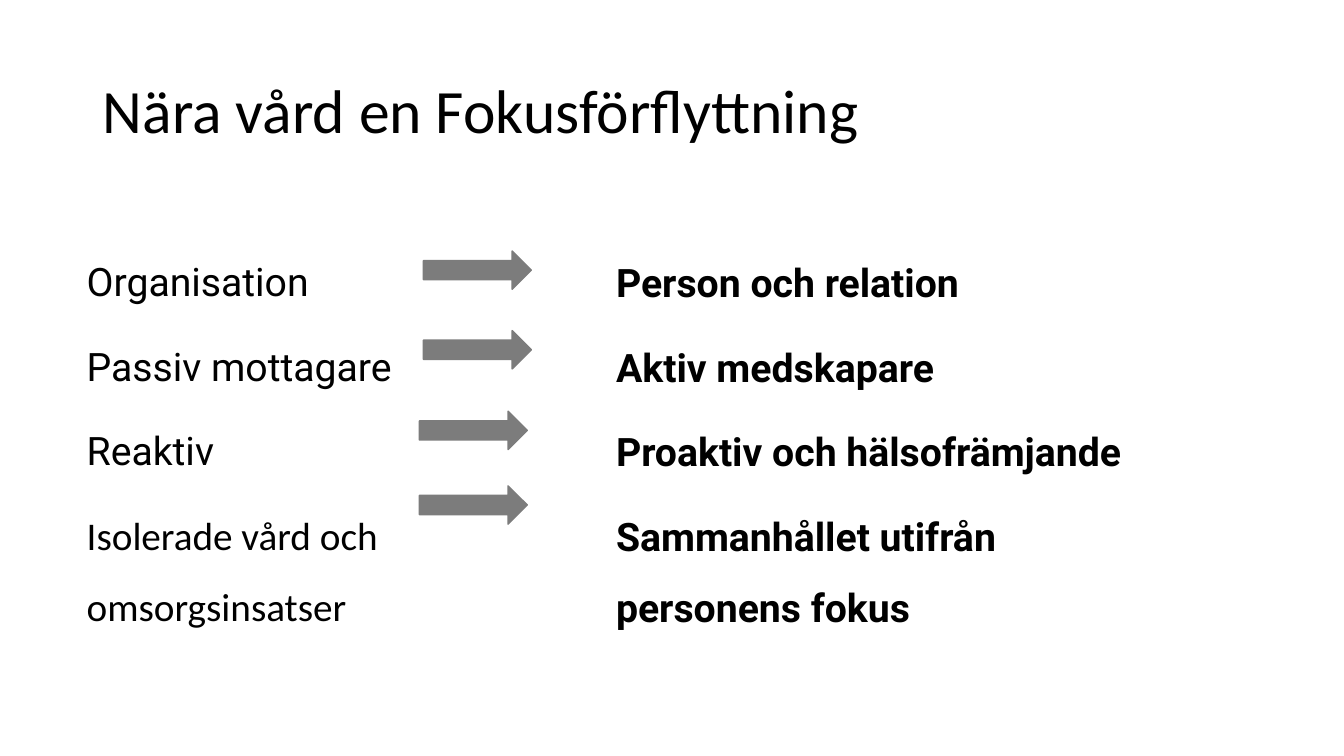
from pptx import Presentation
from pptx.dml.color import RGBColor
from pptx.enum.shapes import MSO_SHAPE as SHAPE
from pptx.enum.text import MSO_ANCHOR as ANCHOR, MSO_AUTO_SIZE as AUTO, PP_ALIGN as ALIGN
from pptx.oxml.ns import qn
from pptx.util import Inches, Pt

BLACK = RGBColor(0x00, 0x00, 0x00)
GREY = RGBColor(0x7C, 0x7C, 0x7C)

FROM_ITEMS = [
    ("Organisation", "Roboto"),
    ("Passiv mottagare", "Roboto"),
    ("Reaktiv", "Roboto"),
    ("Isolerade vård och omsorgsinsatser", "Calibri"),
]
TO_ITEMS = [
    ("Person och relation", "Roboto"),
    ("Aktiv medskapare", "Roboto"),
    ("Proaktiv och hälsofrämjande", "Roboto"),
    ("Sammanhållet utifrån personens fokus", "Roboto"),
]
ARROW_SPOTS = [(4.2, 2.49), (4.2, 3.28), (4.16, 4.08), (4.16, 4.82)]


def place(sp, left, top, width, height):
    sp.left, sp.top = Inches(left), Inches(top)
    sp.width, sp.height = Inches(width), Inches(height)


def format_paragraph(p, font, size, spacing, bold=False):
    p.alignment = ALIGN.LEFT
    p.line_spacing = spacing
    for r in p.runs:
        r.font.name = font
        r.font.size = Pt(size)
        r.font.bold = bold
        r.font.color.rgb = BLACK


def set_title(sp, text):
    place(sp, 0.92, 0.4, 11.5, 1.45)
    tf = sp.text_frame
    tf.text = text
    tf.auto_size = AUTO.NONE
    tf.vertical_anchor = ANCHOR.MIDDLE
    format_paragraph(tf.paragraphs[0], "Calibri", 44, 0.9)


def fill_column(sp, box, items, bold=False):
    place(sp, *box)
    tf = sp.text_frame
    tf.text = "\n".join(text for text, _ in items)
    tf.auto_size = AUTO.NONE
    tf.vertical_anchor = ANCHOR.TOP
    for i, (p, (_, font)) in enumerate(zip(tf.paragraphs, items)):
        format_paragraph(p, font, 28, 1.5, bold)
        p.space_before = Pt(10 if i else 0)
        # Plain lines without bullets
        pPr = p._p.get_or_add_pPr()
        pPr.set("marL", str(Inches(0.03)))
        pPr.set("indent", "0")
        pPr.append(pPr.makeelement(qn("a:buNone"), {}))


def add_arrow(s, left, top):
    sp = s.shapes.add_shape(SHAPE.RIGHT_ARROW, Inches(left), Inches(top),
                            Inches(1.07), Inches(0.38))
    sp.shadow.inherit = False
    sp.fill.solid()
    sp.fill.fore_color.rgb = GREY
    sp.line.color.rgb = GREY
    sp.line.width = Pt(1)


def main():
    prs = Presentation()
    prs.slide_width, prs.slide_height = Inches(13.33), Inches(7.5)
    s = prs.slides.add_slide(prs.slide_layouts.get_by_name("Two Content"))

    # Title and the two columns
    set_title(s.shapes.title, "Nära vård en Fokusförflyttning")
    fill_column(s.placeholders[1], (0.73, 2.27, 5.16, 4.09), FROM_ITEMS)
    fill_column(s.placeholders[2], (5.98, 2.28, 5.25, 4.09), TO_ITEMS, bold=True)

    # Arrows from old focus to new
    for left, top in ARROW_SPOTS:
        add_arrow(s, left, top)

    prs.save("out.pptx")


if __name__ == "__main__":
    main()
